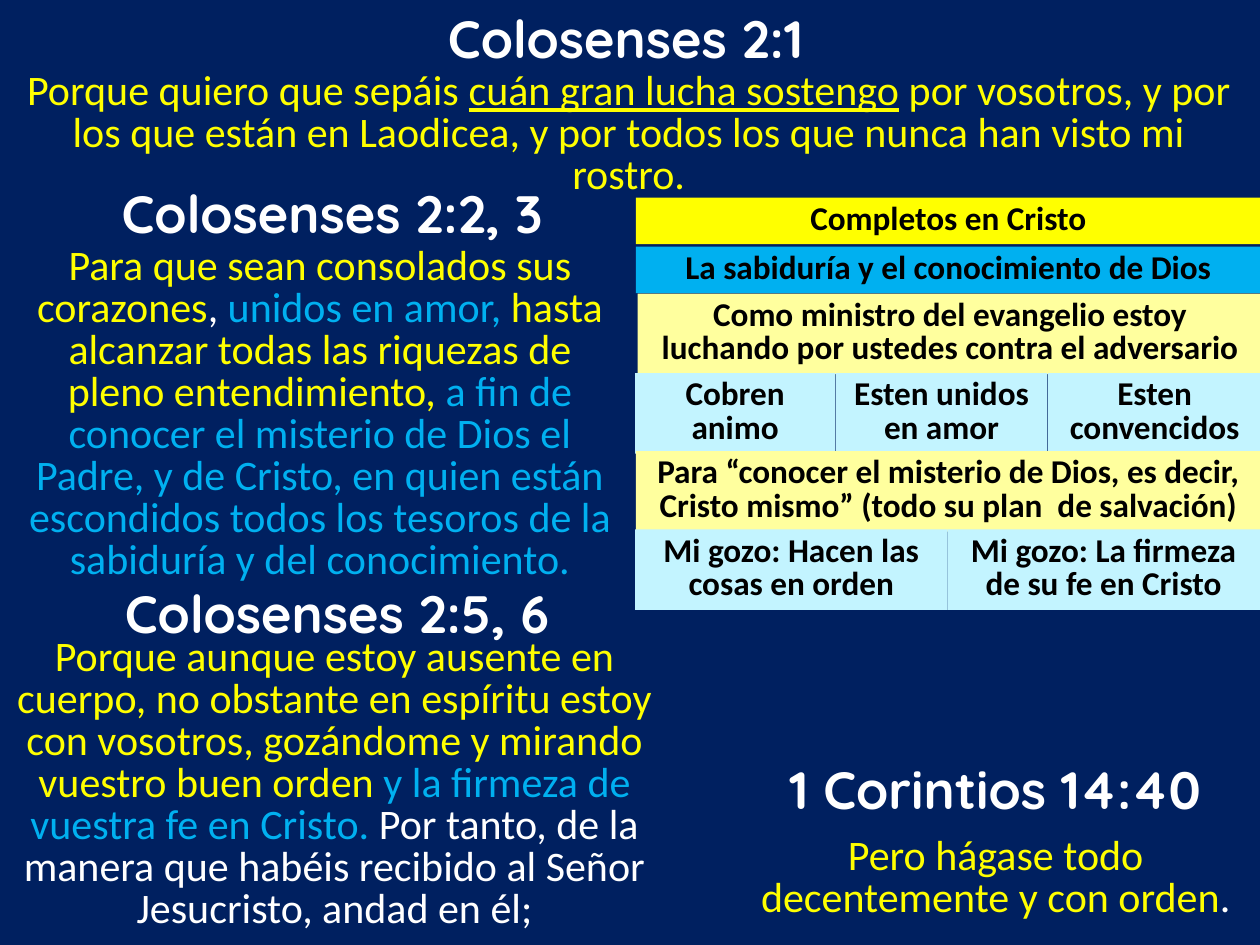
import pptx
import pptx.dml.color
import pptx.enum.shapes
import pptx.enum.text
import pptx.util
from dataclasses import dataclass

Pt = pptx.util.Pt


@dataclass(frozen=True)
class Theme:
    navy: str = "002060"
    white: str = "FFFFFF"
    black: str = "000000"
    yellow: str = "FFFF00"
    blue: str = "00B0F0"
    cream: str = "FFFF9E"
    ice: str = "C3F4FF"
    heading_font: str = "Quicksand"
    body_font: str = "Calibri"
    heading_size: float = 30
    verse_size: float = 24
    cell_size: float = 19


theme = Theme()


def rgb(value):
    return pptx.dml.color.RGBColor.from_string(value)


def write(box, spans, *, place, font, size, bold=False, spacing=None):
    """Place the box and fill it with (text, colour[, underlined]) spans."""
    box.left, box.top, box.width, box.height = map(Pt, place)
    frame = box.text_frame
    frame.word_wrap = True
    frame.auto_size = pptx.enum.text.MSO_AUTO_SIZE.SHAPE_TO_FIT_TEXT
    frame.vertical_anchor = pptx.enum.text.MSO_ANCHOR.TOP
    para = frame.paragraphs[0]
    para.alignment = pptx.enum.text.PP_ALIGN.CENTER
    if spacing:
        para.line_spacing = Pt(spacing)
    for text, colour, *underlined in spans:
        span = para.add_run()
        span.text = text
        span.font.name = font
        span.font.size = Pt(size)
        span.font.bold = bold
        span.font.color.rgb = rgb(colour)
        if underlined:
            span.font.underline = True


deck = pptx.Presentation()
deck.slide_width, deck.slide_height = Pt(720), Pt(540)
page = deck.slides.add_slide(deck.slide_layouts[5])
page.background.fill.solid()
page.background.fill.fore_color.rgb = rgb(theme.navy)

# Each passage: heading, heading place, verse place, verse spans
passages = [
    ("Colosenses 2:1", (190, 0, 335, 44), (0, 37.5, 718.5, 80.5), [
        ("Porque quiero que sepáis ", theme.yellow),
        ("cuán gran lucha sostengo", theme.yellow, True),
        (" por vosotros, y por los que están en Laodicea, y por todos los que "
         "nunca han visto mi rostro.", theme.yellow),
    ]),
    ("Colosenses 2:2, 3", (22.3, 100, 335, 44), (8.6, 137.5, 348.5, 201.5), [
        ("Para que sean consolados sus corazones", theme.yellow),
        (", ", theme.white),
        ("unidos en amor, ", theme.blue),
        ("hasta alcanzar todas las riquezas de pleno entendimiento, ", theme.yellow),
        ("a fin de conocer el misterio de Dios el Padre, y de Cristo, en quien "
         "están escondidos todos los tesoros de la sabiduría y del conocimiento.",
         theme.blue),
    ]),
    ("Colosenses 2:5, 6", (25.2, 328.3, 335, 44), (0, 360.7, 382.3, 177), [
        ("Porque aunque estoy ausente en cuerpo, no obstante en espíritu estoy "
         "con vosotros, gozándome y mirando vuestro buen orden ", theme.yellow),
        ("y la firmeza de vuestra fe en Cristo.", theme.blue),
        (" Por tanto, de la manera que habéis recibido al Señor Jesucristo, "
         "andad en él;", theme.white),
    ]),
    ("1 Corintios 14:40", (429, 429, 279.5, 44), (417, 474.5, 304, 56), [
        ("Pero hágase todo decentemente y con orden", theme.yellow),
        (".", theme.white),
    ]),
]
for number, (heading, heading_place, verse_place, verse) in enumerate(passages):
    heading_box = page.shapes.add_textbox(0, 0, 0, 0) if number else page.shapes.title
    write(heading_box, [(heading, theme.white)], place=heading_place,
          font=theme.heading_font, size=theme.heading_size, bold=True)
    write(page.shapes.add_textbox(0, 0, 0, 0), verse, place=verse_place,
          font=theme.body_font, size=theme.verse_size, spacing=theme.verse_size)

# Each outline row: top, height, fill, cells as (left, width, text)
left, width = 363.4, 357
half = width / 2
outline = [
    (113, 26.6, theme.yellow, [(left, width, "Completos en Cristo")]),
    (141, 26.6, theme.blue, [(left, width, "La sabiduría y el conocimiento de Dios")]),
    (167.8, 46, theme.cream, [
        (left + 1, width, "Como ministro del evangelio estoy luchando por ustedes "
                          "contra el adversario")]),
    (213.2, 46, theme.ice, [
        (left - 0.5, 114.4, "Cobren animo"),
        (477.5, 121, "Esten unidos en amor"),
        (599, 121.6, "Esten convencidos")]),
    (257.8, 46, theme.cream, [
        (left, width, "Para “conocer el misterio de Dios, es decir, Cristo mismo” "
                      "(todo su plan  de salvación)")]),
    (302.5, 46, theme.ice, [
        (left - 0.5, half, "Mi gozo: Hacen las cosas en orden"),
        (left - 0.5 + half, half, "Mi gozo: La firmeza de su fe en Cristo")]),
]
for top, height, fill, cells in outline:
    for cell_left, cell_width, text in cells:
        cell = page.shapes.add_shape(
            pptx.enum.shapes.MSO_SHAPE.RECTANGLE, 0, 0, 0, 0)
        cell.shadow.inherit = False
        cell.fill.solid()
        cell.fill.fore_color.rgb = rgb(fill)
        cell.line.fill.background()
        write(cell, [(text, theme.black)], place=(cell_left, top, cell_width, height),
              font=theme.body_font, size=theme.cell_size, bold=True,
              spacing=theme.cell_size)

deck.save("out.pptx")
